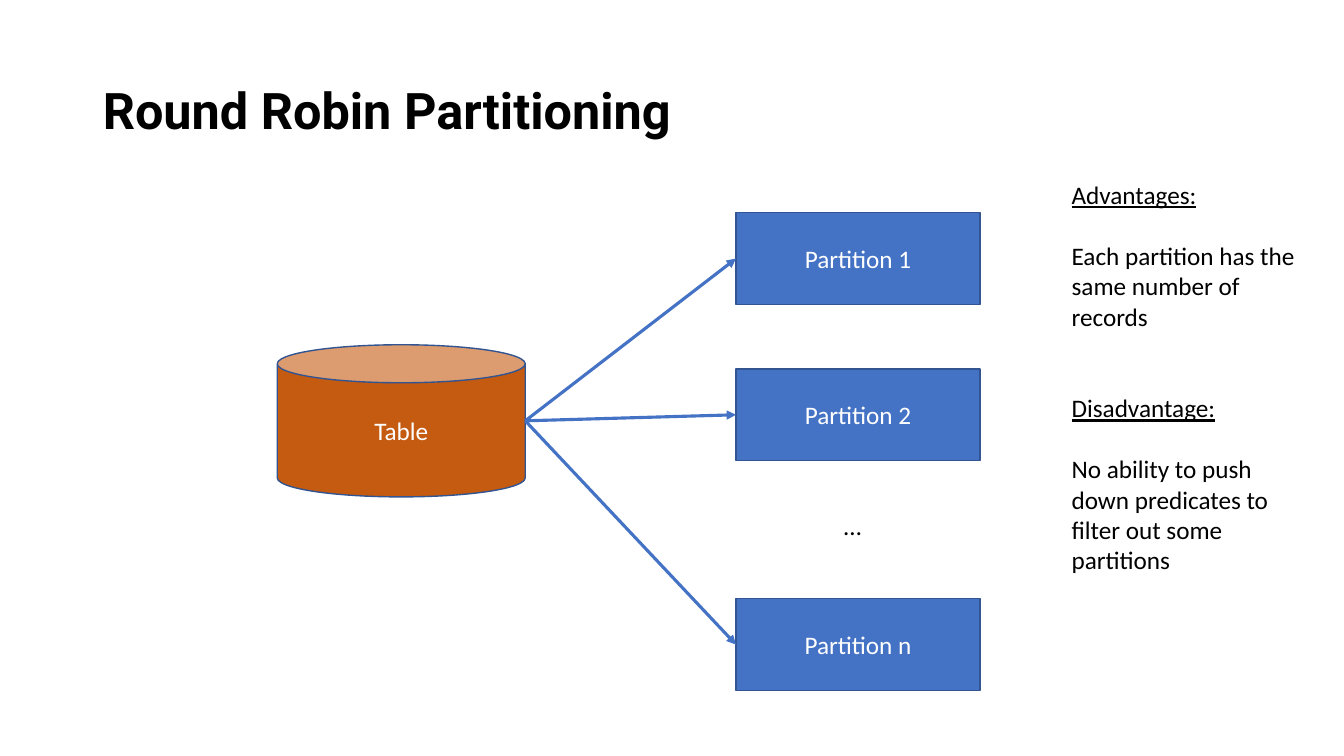
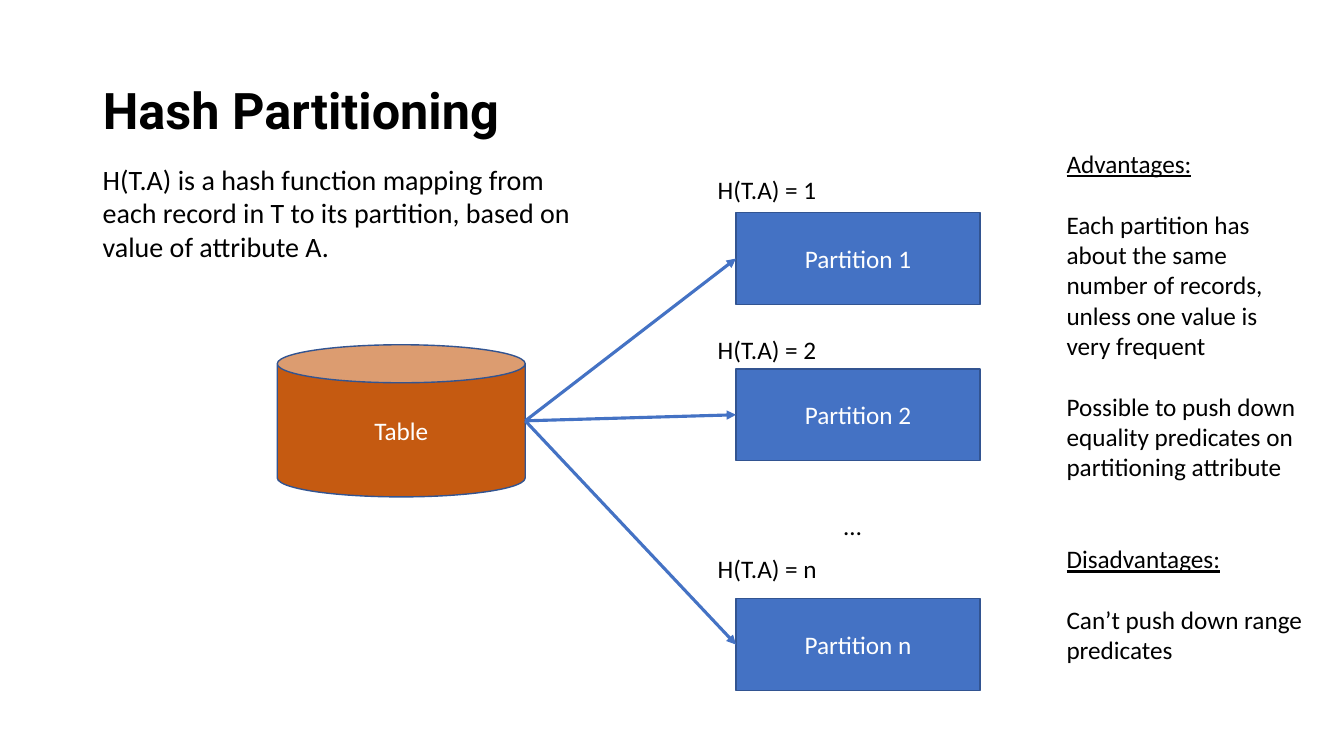
from lxml import etree
from pptx import Presentation
from pptx.dml.color import RGBColor
from pptx.enum.shapes import MSO_CONNECTOR as LINK, MSO_SHAPE as KIND
from pptx.enum.text import MSO_ANCHOR as ANCHOR, MSO_AUTO_SIZE as FIT, PP_ALIGN as ALIGN
from pptx.oxml.ns import qn
from pptx.util import Inches, Pt

BLACK, WHITE = "000000", "FFFFFF"
BLUE, NAVY, RUST = "4472C4", "325491", "C55A11"
BODY, HEAD = "Calibri", "Roboto"
GAP = 22  # points, one line of 18 pt text

TABLE_TOP = 1.31  # offsets from the top of the diagram
ROWS = [("1", 0), ("2", 1.55), ("n", 3.83)]
DOTS_TOP = 2.9


def paint(fmt, color):
    """Give a fill, line or font format a solid hex colour."""
    if hasattr(fmt, "solid"):
        fmt.solid()
        fmt = fmt.fore_color
    elif hasattr(fmt, "color"):
        fmt = fmt.color
    fmt.rgb = RGBColor.from_string(color)


def style(para, size=18, color=BLACK, name=BODY):
    font = para.font
    font.size, font.name = Pt(size), name
    paint(font, color)


def set_title(slide, text):
    title = slide.shapes.title
    title.left, title.top = Inches(0.92), Inches(0.4)
    title.width, title.height = Inches(11.5), Inches(1.45)
    frame = title.text_frame
    frame.text = text
    frame.auto_size, frame.vertical_anchor = FIT.NONE, ANCHOR.MIDDLE
    para = frame.paragraphs[0]
    para.alignment, para.line_spacing = ALIGN.LEFT, 0.9
    style(para, 36, name=HEAD)
    para.font.bold = True


def add_text(slide, left, top, width, height, text="", size=18):
    box = slide.shapes.add_textbox(*map(Inches, (left, top, width, height)))
    frame = box.text_frame
    frame.word_wrap = True
    frame.text = text
    style(frame.paragraphs[0], size)
    return frame


def add_block(slide, kind, left, top, width, height, text, color):
    block = slide.shapes.add_shape(kind, *map(Inches, (left, top, width, height)))
    block.shadow.inherit = False
    paint(block.fill, color)
    paint(block.line, NAVY)
    block.line.width = Pt(1)
    frame = block.text_frame
    frame.text = text
    frame.vertical_anchor = ANCHOR.MIDDLE
    para = frame.paragraphs[0]
    para.alignment = ALIGN.CENTER
    style(para, color=WHITE)
    return block


def add_arrow(slide, source, target):
    """Run an arrow from the right of source to the left of target."""
    x, y = source.left + source.width, source.top + source.height // 2
    arrow = slide.shapes.add_connector(LINK.STRAIGHT, x, y, x, y)
    arrow.end_connect(target, 1)
    paint(arrow.line, BLUE)
    arrow.line.width = Pt(2.25)
    props = arrow._element.spPr
    tail = etree.SubElement(props.find(qn("a:ln")), qn("a:tailEnd"))
    tail.set("type", "triangle")
    etree.SubElement(props, qn("a:effectLst"))


def add_diagram(slide, left, top):
    right = left + 4.55
    table = add_block(slide, KIND.CAN, left, top + TABLE_TOP, 2.46, 1.51, "Table", RUST)
    for key, drop in ROWS:
        part = add_block(slide, KIND.RECTANGLE, right, top + drop, 2.42, 0.91,
                         f"Partition {key}", BLUE)
        add_arrow(slide, table, part)
    add_text(slide, right + 0.97, top + DOTS_TOP, 1.45, 0.4, "…")


def add_labels(slide, left, top):
    for (key, drop), lift in zip(ROWS, (0.43, 0.39, 0.5)):
        add_text(slide, left, top + drop - lift, 1.25, 0.4, f"H(T.A) = {key}")


def add_notes(slide, left, top, height, groups):
    """Stack underlined headings, each followed by its points."""
    frame = add_text(slide, left, top, 2.56, height)
    para = frame.paragraphs[0]
    for i, (head, points) in enumerate(groups):
        if i:
            para = frame.add_paragraph()
            para.space_before = Pt(2 * GAP)
        para.text = head
        style(para)
        para.font.underline = True
        for point in points:
            para = frame.add_paragraph()
            para.text = point
            para.space_before = Pt(GAP)
            style(para)


def add_scheme(deck, title):
    slide = deck.slides.add_slide(deck.slide_layouts[5])
    set_title(slide, title)
    add_diagram(slide, 2.75, 2.11)
    return slide


def main():
    deck = Presentation()
    deck.slide_width, deck.slide_height = Inches(13.33), Inches(7.5)

    robin = add_scheme(deck, "Round Robin Partitioning")
    add_notes(robin, 10.53, 1.73, 4.04, [
        ("Advantages:", ["Each partition has the same number of records"]),
        ("Disadvantage:", ["No ability to push down predicates to filter out some partitions"]),
    ])

    hashed = add_scheme(deck, "Hash Partitioning")
    add_labels(hashed, 7.02, 2.11)
    add_text(hashed, 0.92, 1.56, 5.14, 1.11,
             "H(T.A) is a hash function mapping from each record in T to its partition, "
             "based on value of attribute A.", 20)
    add_notes(hashed, 10.48, 1.42, 5.55, [
        ("Advantages:", [
            "Each partition has about the same number of records, "
            "unless one value is very frequent",
            "Possible to push down equality predicates on partitioning attribute",
        ]),
        ("Disadvantages:", ["Can’t push down range predicates"]),
    ])
    deck.save("out.pptx")


if __name__ == "__main__":
    main()
